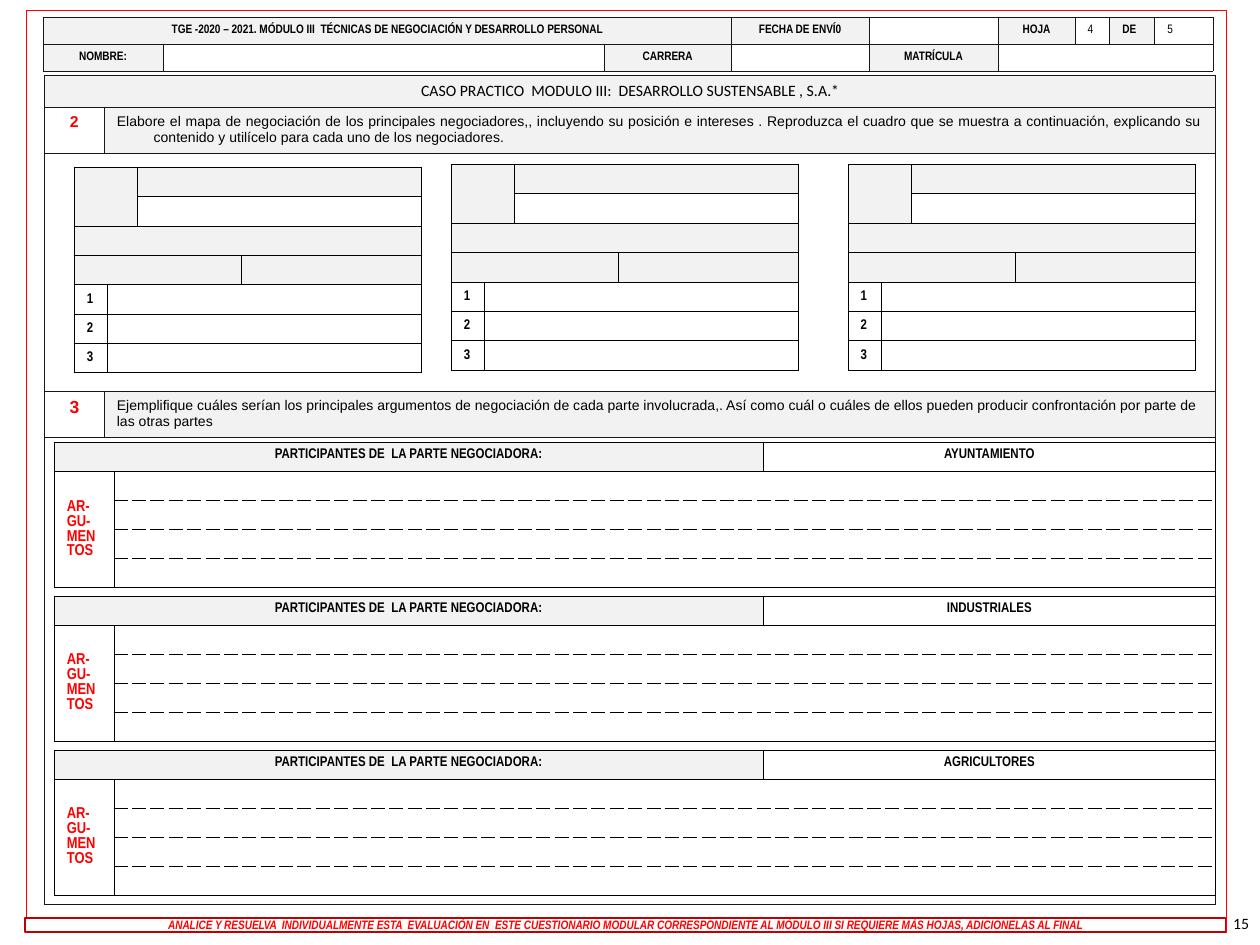
from dataclasses import dataclass

from lxml.etree import SubElement
from pptx import Presentation
from pptx.dml.color import RGBColor
from pptx.enum.shapes import MSO_SHAPE as Shape
from pptx.enum.text import MSO_ANCHOR as Anchor, PP_ALIGN as Align
from pptx.oxml.ns import qn
from pptx.util import Pt


@dataclass(frozen=True)
class Theme:
    black: RGBColor = RGBColor(0, 0, 0)
    ink: RGBColor = RGBColor(0x18, 0x17, 0x17)
    red: RGBColor = RGBColor(0xFF, 0, 0)
    dark_red: RGBColor = RGBColor(0xC0, 0, 0)
    gray: RGBColor = RGBColor(0xF2, 0xF2, 0xF2)
    white: RGBColor = RGBColor(0xFF, 0xFF, 0xFF)
    narrow: str = "Arial Narrow"
    sans: str = "Arial"
    plain: str = "Calibri"
    blank: int = 6
    tiny: int = 7
    small: int = 8
    normal: int = 9
    large: int = 10
    hairline: float = 0.5


theme = Theme()


def write(frame, text, size, name, color=theme.black, bold=False, align=Align.LEFT):
    paragraph = frame.paragraphs[0]
    paragraph.text = text
    paragraph.alignment = align
    font = paragraph.font
    font.size, font.name, font.bold = Pt(size), name, bold
    font.color.rgb = color
    return paragraph


def build_table(left, top, columns, rows, border, spans, gray_cells, dashed=()):
    """Add a bordered table; dashed holds the (row, side) edges drawn with dashes."""
    frame = slide.shapes.add_table(len(rows), len(columns), Pt(left), Pt(top),
                                   Pt(sum(columns)), Pt(sum(rows)))
    table = frame.table
    table.first_row = table.horz_banding = False
    for column, width in zip(table.columns, columns):
        column.width = Pt(width)
    for row, height in zip(table.rows, rows):
        row.height = Pt(height)
    for r in range(len(rows)):
        for c in range(len(columns)):
            cell = table.cell(r, c)
            cell.text_frame.paragraphs[0].font.size = Pt(theme.blank)
            properties = cell._tc.get_or_add_tcPr()
            for side in "LRTB":
                line = SubElement(properties, qn(f"a:ln{side}"), w=str(Pt(theme.hairline)))
                fill = SubElement(line, qn("a:solidFill"))
                SubElement(fill, qn("a:srgbClr"), val=str(border))
                is_dashed = c > 0 and (r, side) in dashed
                SubElement(line, qn("a:prstDash"), val="sysDash" if is_dashed else "solid")
            cell.fill.solid()
            cell.fill.fore_color.rgb = theme.gray if (r, c) in gray_cells else theme.white
    for r1, c1, r2, c2 in spans:
        table.cell(r1, c1).merge(table.cell(r2, c2))
    return table


presentation = Presentation()
presentation.slide_width, presentation.slide_height = Pt(720), Pt(540)
slide = presentation.slides.add_slide(presentation.slide_layouts[6])

# Form header
header = build_table(
    24.6, 9.8, [68.6, 252, 72.6, 78.8, 73.7, 44, 20, 25.7, 33.2], [15.4] * 2, theme.ink,
    spans=[(0, 0, 0, 2), (1, 5, 1, 8)],
    gray_cells={(0, 0), (0, 3), (0, 5), (0, 7), (1, 0), (1, 2), (1, 4)})
header_texts = [
    (0, 0, "TGE -2020 – 2021. MÓDULO III  TÉCNICAS DE NEGOCIACIÓN Y DESARROLLO PERSONAL"),
    (0, 3, "FECHA DE ENVÍ0"), (0, 5, "HOJA"), (0, 6, "4"), (0, 7, "DE"), (0, 8, "5"),
    (1, 0, "NOMBRE:"), (1, 2, "CARRERA"), (1, 4, "MATRÍCULA")]
for r, c, text in header_texts:
    cell = header.cell(r, c)
    cell.vertical_anchor = Anchor.MIDDLE
    write(cell.text_frame, text, theme.tiny, theme.narrow, bold=not text.isdigit(),
          align=Align.LEFT if c > 5 else Align.CENTER)

# Case body with its two questions
body = build_table(
    25.4, 43, [34.2, 635], [18.3, 26.3, 136, 26.3, 266.9], theme.ink,
    spans=[(r, 0, r, 1) for r in (0, 2, 4)], gray_cells={(0, 0), (1, 1), (3, 1)})
title = write(body.cell(0, 0).text_frame,
              "CASO PRACTICO  MODULO III:  DESARROLLO SUSTENSABLE , S.A.*",
              theme.normal, theme.plain, align=Align.CENTER)
title.space_after = Pt(3)
questions = [
    (1, "2", theme.normal, Align.JUSTIFY,
     "Elabore el mapa de negociación de los principales negociadores,, incluyendo su posición "
     "e intereses . Reproduzca el cuadro que se muestra a continuación, explicando su contenido "
     "y utilícelo para cada uno de los negociadores."),
    (3, "3", theme.large, Align.LEFT,
     "Ejemplifique cuáles serían los principales argumentos de negociación de cada parte "
     "involucrada,. Así como cuál o cuáles de ellos pueden producir confrontación por parte "
     "de las otras partes")]
for r, number, size, align, text in questions:
    hanging = [write(body.cell(r, 0).text_frame, number, size, theme.sans, theme.red,
                     bold=True, align=Align.CENTER)]
    question = write(body.cell(r, 1).text_frame, text, theme.small, theme.sans, align=align)
    if align == Align.JUSTIFY:
        hanging.append(question)
    for paragraph in hanging:
        properties = paragraph._p.get_or_add_pPr()
        properties.set("marL", str(Pt(21)))
        properties.set("indent", str(Pt(-21)))

# Page frame
page_frame = slide.shapes.add_shape(Shape.RECTANGLE, Pt(15.1), Pt(5.8), Pt(686), Pt(527))
page_frame.shadow.inherit = False
page_frame.fill.background()
page_frame.line.color.rgb = theme.red
page_frame.line.width = Pt(theme.hairline)

# Negotiation maps
for left, top in [(42.5, 95.6), (257.8, 94), (484.6, 94)]:
    negotiation_map = build_table(
        left, top, [18.8, 17.2, 59.6, 102.8], [16.8] * 7, theme.black,
        spans=[(0, 0, 1, 1), (0, 2, 0, 3), (1, 2, 1, 3), (2, 0, 2, 3), (3, 0, 3, 2)]
        + [(r, 1, r, 3) for r in (4, 5, 6)],
        gray_cells={(0, 0), (0, 2), (2, 0), (3, 0), (3, 3)})
    for number in (1, 2, 3):
        cell = negotiation_map.cell(number + 3, 0)
        cell.vertical_anchor = Anchor.MIDDLE
        write(cell.text_frame, str(number), theme.small, theme.narrow, bold=True)

# Arguments of each party
dashed_edges = {(r, "B") for r in (1, 2, 3)} | {(r, "T") for r in (2, 3, 4)}
for index, party in enumerate(["AYUNTAMIENTO", "INDUSTRIALES", "AGRICULTORES"]):
    arguments = build_table(
        31, 252.8 + 87.9 * index, [34.2, 371, 258.4], [16.6] * 5, theme.black,
        spans=[(0, 0, 0, 1), (1, 0, 4, 0)] + [(r, 1, r, 2) for r in range(1, 5)],
        gray_cells={(0, 0)}, dashed=dashed_edges)
    for c, text in [(0, "PARTICIPANTES DE  LA PARTE NEGOCIADORA:"), (2, party)]:
        write(arguments.cell(0, c).text_frame, text, theme.small, theme.narrow,
              bold=True, align=Align.CENTER)
    label = arguments.cell(1, 0)
    label.vertical_anchor = Anchor.MIDDLE
    write(label.text_frame, "AR-GU-MENTOS", theme.normal, theme.narrow, theme.red, bold=True)

# Footer instruction
footer = slide.shapes.add_shape(Shape.RECTANGLE, Pt(14.3), Pt(524.4), Pt(686), Pt(8.4))
footer.shadow.inherit = False
footer.fill.solid()
footer.fill.fore_color.rgb = theme.white
footer.line.color.rgb = theme.dark_red
footer.line.width = Pt(1)
footer.text_frame.vertical_anchor = Anchor.MIDDLE
instruction = write(
    footer.text_frame,
    "ANALICE Y RESUELVA  INDIVIDUALMENTE ESTA  EVALUACIÓN EN  ESTE CUESTIONARIO MODULAR "
    "CORRESPONDIENTE AL MÓDULO III SI REQUIERE MÁS HOJAS, ADICIONELAS AL FINAL",
    theme.tiny, theme.narrow, theme.red, bold=True, align=Align.CENTER)
instruction.font.italic = True

# Page number
page_number = slide.shapes.add_textbox(Pt(553), Pt(513.4), Pt(167.8), Pt(28.8))
page_number.text_frame.word_wrap = True
page_number.text_frame.vertical_anchor = Anchor.MIDDLE
write(page_number.text_frame, "15", theme.normal, theme.plain, align=Align.RIGHT)

presentation.save("out.pptx")
